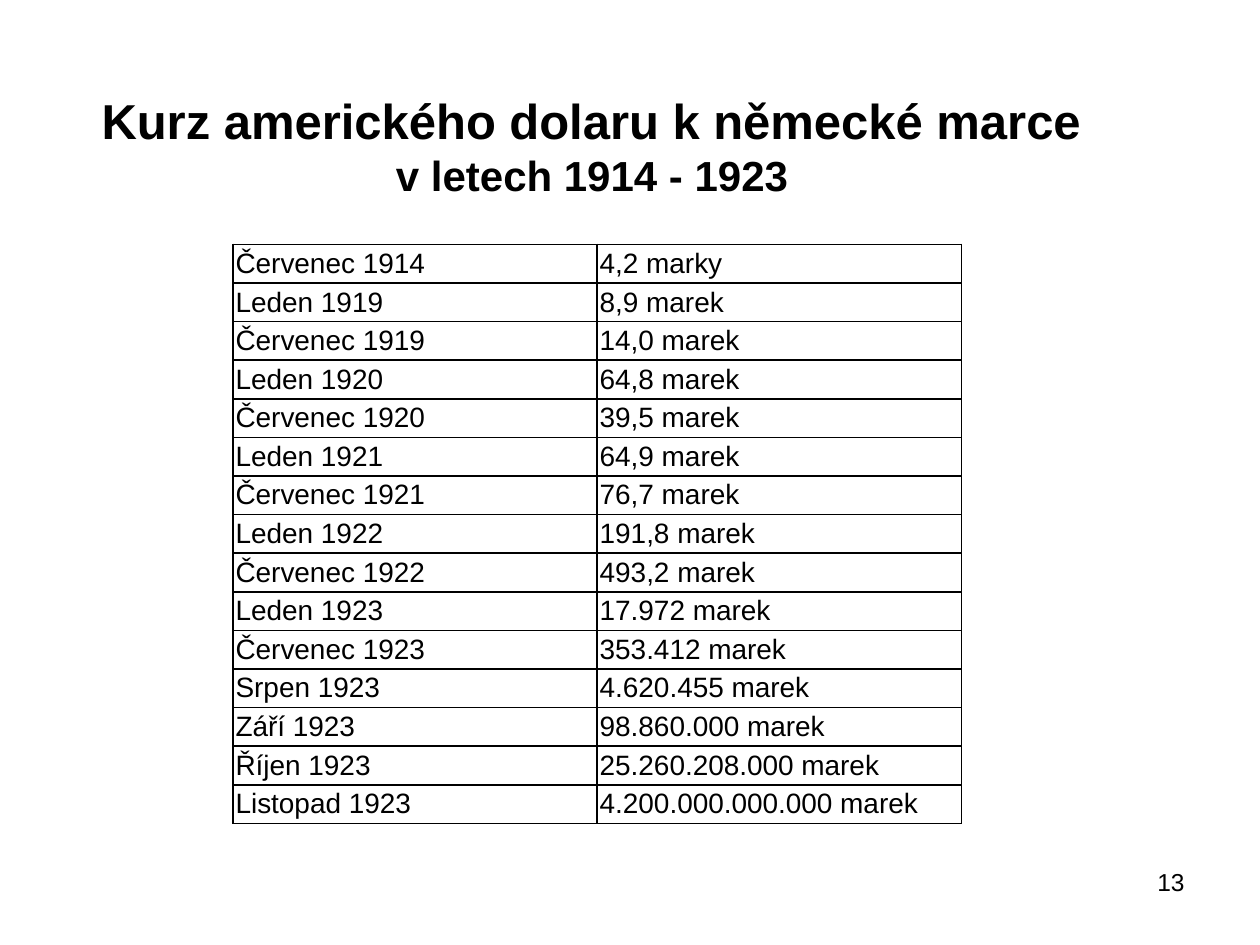
"""Build a slide tabulating the dollar to mark exchange rate, 1914 to 1923."""
from typing import NamedTuple

from lxml import etree
from pptx import Presentation, util as u
from pptx.dml.color import RGBColor
from pptx.enum import text
from pptx.oxml.ns import qn

BLACK = RGBColor(0, 0, 0)
WHITE = RGBColor(255, 255, 255)
FONT = "Arial"


class Rate(NamedTuple):
    month: str
    marks: str


RATES = [
    Rate("Červenec 1914", "4,2 marky"),
    Rate("Leden 1919", "8,9 marek"),
    Rate("Červenec 1919", "14,0 marek"),
    Rate("Leden 1920", "64,8 marek"),
    Rate("Červenec 1920", "39,5 marek"),
    Rate("Leden 1921", "64,9 marek"),
    Rate("Červenec 1921", "76,7 marek"),
    Rate("Leden 1922", "191,8 marek"),
    Rate("Červenec 1922", "493,2 marek"),
    Rate("Leden 1923", "17.972 marek"),
    Rate("Červenec 1923", "353.412 marek"),
    Rate("Srpen 1923", "4.620.455 marek"),
    Rate("Září 1923", "98.860.000 marek"),
    Rate("Říjen 1923", "25.260.208.000 marek"),
    Rate("Listopad 1923", "4.200.000.000.000 marek"),
]


def write(p, content: str, *, size: float, bold: bool = False,
          align=text.PP_ALIGN.LEFT) -> None:
    p.alignment = align
    r = p.add_run()
    r.text = content
    r.font.name = FONT
    r.font.size = u.Pt(size)
    r.font.bold = bold
    r.font.color.rgb = BLACK


def add_borders(cell, width: float = 1) -> None:
    tc_pr = cell._tc.get_or_add_tcPr()
    for i, side in enumerate(("lnL", "lnR", "lnT", "lnB")):
        ln = etree.Element(qn(f"a:{side}"), w=str(u.Pt(width)))
        fill = etree.SubElement(ln, qn("a:solidFill"))
        etree.SubElement(fill, qn("a:srgbClr"), val=str(BLACK))
        tc_pr.insert(i, ln)


def add_title(s) -> None:
    sp = s.shapes.title
    sp.left, sp.top = u.Inches(0.65), u.Inches(0.66)
    sp.width, sp.height = u.Inches(8.19), u.Inches(1.28)
    tf = sp.text_frame
    tf.word_wrap = True
    tf.auto_size = text.MSO_AUTO_SIZE.NONE
    tf.vertical_anchor = text.MSO_ANCHOR.MIDDLE
    tf.margin_bottom = u.Inches(0.34)
    write(tf.paragraphs[0], "Kurz amerického dolaru k německé marce ",
          size=28, bold=True, align=text.PP_ALIGN.CENTER)
    write(tf.add_paragraph(), "v letech 1914 - 1923 ",
          size=24, bold=True, align=text.PP_ALIGN.CENTER)


def add_rates(s, rates: list[Rate]) -> None:
    table = s.shapes.add_table(
        len(rates), len(Rate._fields), u.Inches(1.85), u.Inches(1.94),
        u.Inches(5.78), u.Inches(4.54)).table
    table.first_row = table.horz_banding = False
    for row, rate in zip(table.rows, rates):
        for cell, value in zip(row.cells, rate):
            cell.fill.solid()
            cell.fill.fore_color.rgb = WHITE
            cell.margin_left = cell.margin_right = u.Inches(0.02)
            cell.margin_top = cell.margin_bottom = u.Inches(0.02)
            cell.vertical_anchor = text.MSO_ANCHOR.MIDDLE
            write(cell.text_frame.paragraphs[0], value, size=16)
            add_borders(cell)


def add_page_number(s, number: int) -> None:
    sp = s.shapes.add_textbox(u.Inches(7.17), u.Inches(6.83),
                              u.Inches(2.33), u.Inches(0.52))
    tf = sp.text_frame
    tf.word_wrap = True
    write(tf.paragraphs[0], str(number), size=14, align=text.PP_ALIGN.RIGHT)


def main() -> None:
    prs = Presentation()
    prs.slide_width, prs.slide_height = u.Inches(10), u.Inches(7.5)
    s = prs.slides.add_slide(prs.slide_layouts[5])
    add_page_number(s, 13)
    add_rates(s, RATES)
    add_title(s)
    prs.save("out.pptx")


if __name__ == "__main__":
    main()
